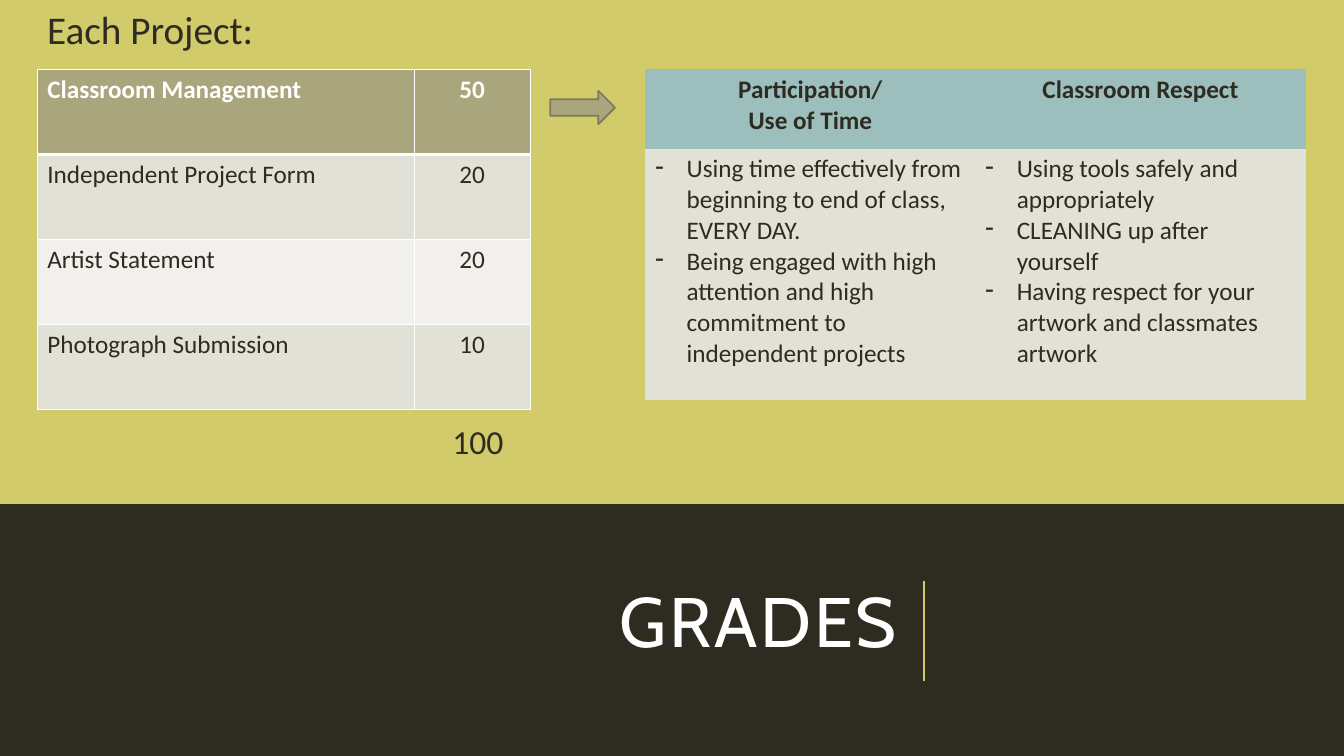
from lxml import etree
from pptx import Presentation
from pptx.dml.color import RGBColor
from pptx.enum.shapes import MSO_CONNECTOR, MSO_SHAPE
from pptx.enum.text import MSO_ANCHOR, MSO_AUTO_SIZE, PP_ALIGN
from pptx.oxml.ns import qn
from pptx.util import Cm, Pt

LEFT, CENTER, RIGHT = PP_ALIGN.LEFT, PP_ALIGN.CENTER, PP_ALIGN.RIGHT
MIDDLE, NO_FIT = MSO_ANCHOR.MIDDLE, MSO_AUTO_SIZE.NONE
RECTANGLE, RIGHT_ARROW = MSO_SHAPE.RECTANGLE, MSO_SHAPE.RIGHT_ARROW
STRAIGHT = MSO_CONNECTOR.STRAIGHT

DARK = RGBColor(0x2E, 0x2B, 0x21)
LIME = RGBColor(0xD2, 0xCB, 0x6C)
WHITE = RGBColor(0xFF, 0xFF, 0xFF)
KHAKI = RGBColor(0xA9, 0xA5, 0x7C)
OLIVE = RGBColor(0x7D, 0x7A, 0x5C)
TEAL = RGBColor(0x9C, 0xBE, 0xBD)
BAND = RGBColor(0xE2, 0xE1, 0xD7)
PALE = RGBColor(0xF1, 0xF0, 0xEC)

PLAIN_STYLE = "{2D5ABB26-0587-4C30-8999-92F81FD0307C}"
INDENT = Cm(0.79)

SCORES = [
    ("Classroom Management", "50"),
    ("Independent Project Form", "20"),
    ("Artist Statement", "20"),
    ("Photograph Submission", "10"),
]
CRITERIA = [
    (["Participation/", "Use of Time"],
     ["Using time effectively from beginning to end of class, EVERY DAY.",
      "Being engaged with high attention and high commitment to independent projects"]),
    (["Classroom Respect"],
     ["Using tools safely and appropriately",
      "CLEANING up after yourself",
      "Having respect for your artwork and classmates artwork"]),
]


def write(tf, lines, size=18, color=DARK, font="Calibri", bold=False,
          align=LEFT, bullet=None, line_spacing=None, tracking=None):
    for i, line in enumerate(lines):
        p = tf.add_paragraph() if i else tf.paragraphs[0]
        p.alignment = align
        if line_spacing:
            p.line_spacing = line_spacing
        if bullet:
            pPr = p._p.get_or_add_pPr()
            pPr.set("marL", str(INDENT))
            pPr.set("indent", str(-INDENT))
            etree.SubElement(pPr, qn("a:buChar"), char=bullet)
        r = p.add_run()
        r.text = line
        r.font.name, r.font.size = font, Pt(size)
        r.font.bold, r.font.color.rgb = bold, color
        if tracking:
            r._r.get_or_add_rPr().set("spc", str(tracking * 100))


def add_label(s, text, x, y, w, h, **style):
    tf = s.shapes.add_textbox(Cm(x), Cm(y), Cm(w), Cm(h)).text_frame
    tf.word_wrap = True
    write(tf, [text], **style)


def add_block(s, kind, x, y, w, h, fill, line=None):
    sp = s.shapes.add_shape(kind, Cm(x), Cm(y), Cm(w), Cm(h))
    sp.shadow.inherit = False
    sp.fill.solid()
    sp.fill.fore_color.rgb = fill
    if line:
        sp.line.color.rgb, sp.line.width = line, Pt(1.25)
    else:
        sp.line.fill.background()


def add_grid(s, x, y, widths, heights):
    frame = s.shapes.add_table(len(heights), len(widths), Cm(x), Cm(y),
                               Cm(sum(widths)), Cm(sum(heights)))
    table = frame.table
    table._tbl.tblPr.find(qn("a:tableStyleId")).text = PLAIN_STYLE
    for column, width in zip(table.columns, widths):
        column.width = Cm(width)
    for row, height in zip(table.rows, heights):
        row.height = Cm(height)
    return table


def fill_cell(cell, lines, fill, **style):
    cell.fill.solid()
    cell.fill.fore_color.rgb = fill
    write(cell.text_frame, lines, **style)


def add_borders(cell, top, bottom):
    tcPr = cell._tc.get_or_add_tcPr()
    for i, (side, width) in enumerate([("L", 1), ("R", 1), ("T", top), ("B", bottom)]):
        ln = etree.Element(qn(f"a:ln{side}"), w=str(Pt(width)))
        solid = etree.SubElement(ln, qn("a:solidFill"))
        etree.SubElement(solid, qn("a:srgbClr"), val=str(WHITE))
        tcPr.insert(i, ln)


def add_scores(s, x, y, w, h):
    number_w = 2.92
    add_label(s, "Each Project:", x, y - 1.75, w, 1.45, size=28)
    table = add_grid(s, x, y, [w - number_w, number_w], [h / len(SCORES)] * len(SCORES))
    fills = [KHAKI, BAND, PALE, BAND]
    for i, (row, fill) in enumerate(zip(SCORES, fills)):
        header = i == 0
        for j, (text, align) in enumerate(zip(row, [LEFT, CENTER])):
            cell = table.cell(i, j)
            fill_cell(cell, [text], fill, align=align, bold=header,
                      color=WHITE if header else DARK)
            add_borders(cell, 3 if i == 1 else 1, 3 if header else 1)
    total = sum(int(score) for _, score in SCORES)
    add_label(s, str(total), x + w - 2.21, y + h + 0.18, 2.72, 1.27, size=24)


def add_criteria(s, x, y, w, h):
    head_h = 2
    table = add_grid(s, x, y, [w / 2] * 2, [head_h, h - head_h])
    for j, (heading, points) in enumerate(CRITERIA):
        fill_cell(table.cell(0, j), heading, TEAL, bold=True, align=CENTER)
        fill_cell(table.cell(1, j), points, BAND, bullet="-")


def add_title(s, x, y, w, h):
    title = s.shapes.title
    title.left, title.top, title.width, title.height = Cm(x), Cm(y), Cm(w), Cm(h)
    tf = title.text_frame
    tf.auto_size, tf.vertical_anchor, tf.word_wrap = NO_FIT, MIDDLE, True
    write(tf, ["GRADES"], size=50, color=WHITE, font="Cabin", align=RIGHT,
          line_spacing=0.8, tracking=2)
    rule_x = Cm(x + w + 0.43)
    rule = s.shapes.add_connector(STRAIGHT, rule_x, Cm(y + 3.4), rule_x, Cm(y + 0.86))
    rule.line.color.rgb, rule.line.width = LIME, Pt(1.5)
    etree.SubElement(rule._element.spPr, qn("a:effectLst"))


def main():
    prs = Presentation()
    prs.slide_width, prs.slide_height = Cm(33.87), Cm(19.05)
    s = prs.slides.add_slide(prs.slide_layouts[5])
    s.background.fill.solid()
    s.background.fill.fore_color.rgb = DARK
    add_block(s, RECTANGLE, 0, 0, 33.87, 12.7, LIME)
    add_title(s, 1.27, 13.77, 21.59, 4.06)
    add_scores(s, 0.94, 1.75, 12.42, 8.56)
    add_criteria(s, 16.26, 1.75, 16.64, 8.33)
    add_block(s, RIGHT_ARROW, 13.87, 2.29, 1.63, 0.84, KHAKI, OLIVE)
    prs.save("out.pptx")


if __name__ == "__main__":
    main()
